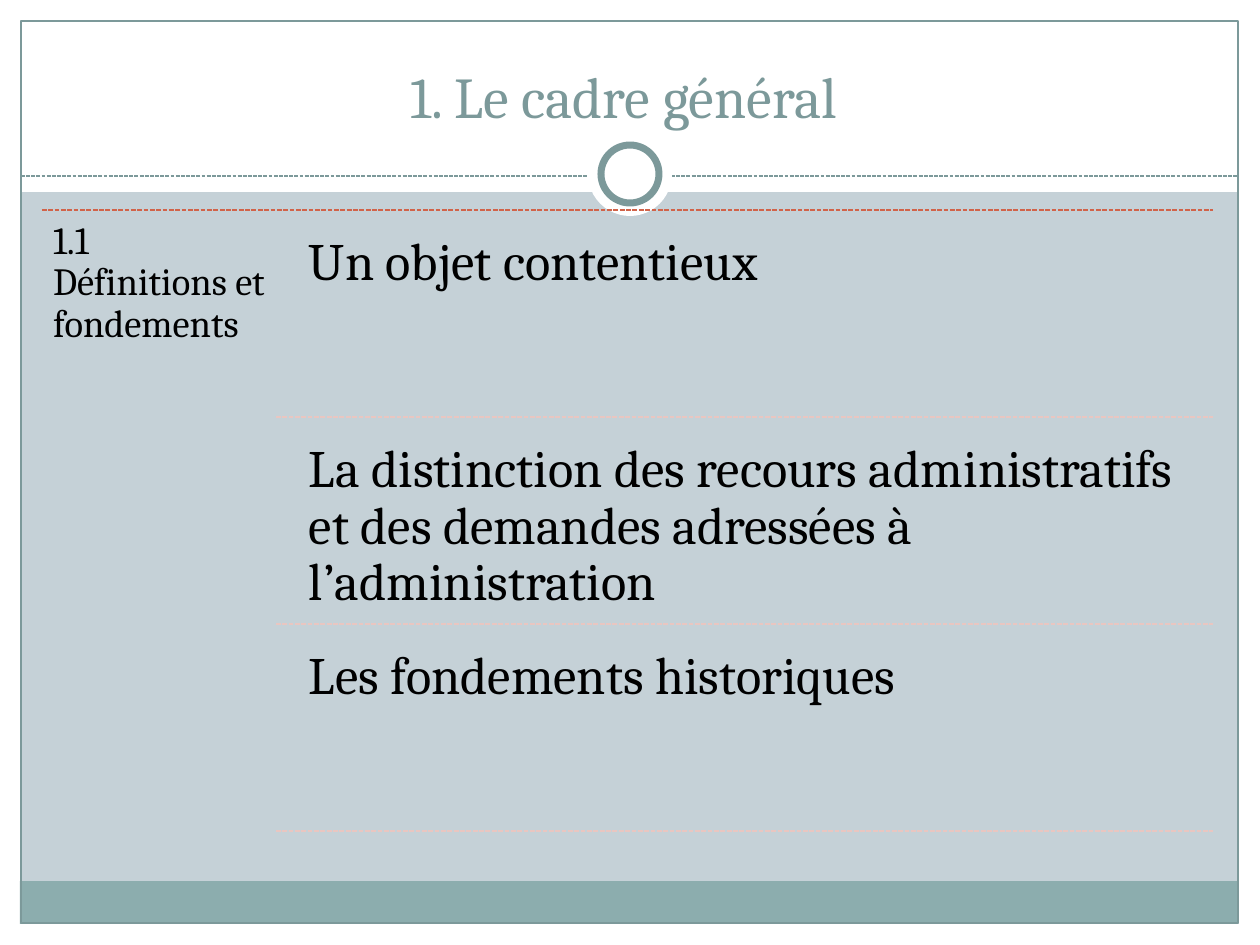
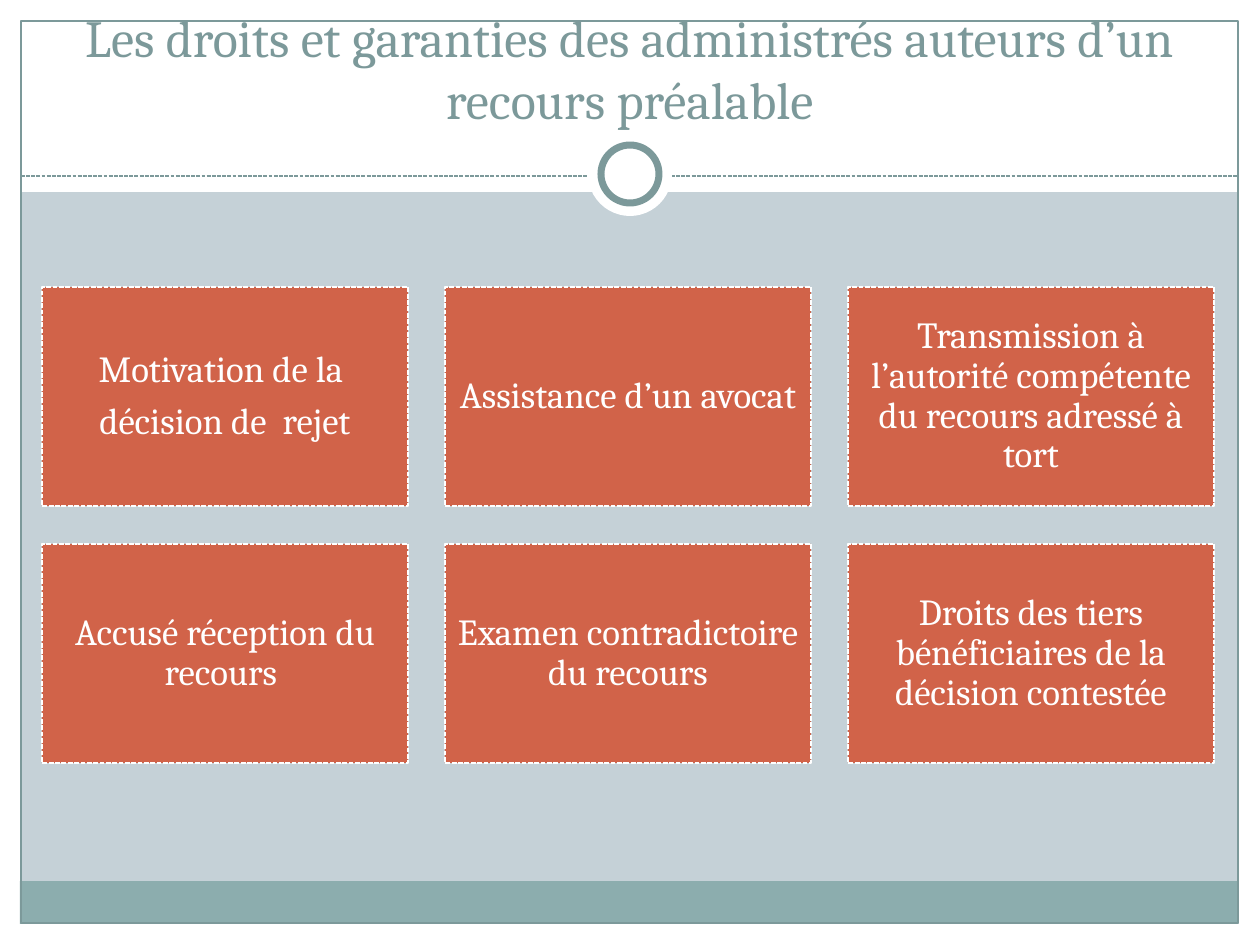
"""Builds two slides on administrative appeals."""
from lxml import etree
from pptx import Presentation
from pptx import util as u
from pptx.dml.color import RGBColor
from pptx.enum import dml, shapes, text
from pptx.oxml import ns

PX = 914400 / 126
TEAL, STRIP, MIST = "7C999A", "8CADAE", "C5D1D7"
RUST, ROSE, WHITE, BLACK = "D16349", "E9C6C1", "FFFFFF", "000000"
RECT, OVAL = shapes.MSO_SHAPE.RECTANGLE, shapes.MSO_SHAPE.OVAL
TOP, MID, LOW = text.MSO_ANCHOR.TOP, text.MSO_ANCHOR.MIDDLE, text.MSO_ANCHOR.BOTTOM
LEFT, MIDDLE = text.PP_ALIGN.LEFT, text.PP_ALIGN.CENTER
hue = RGBColor.from_string


def draw(page, kind, box, fill=None, edge=None, thick=0.75, dash=False):
    spots = [round(n * PX) for n in box]
    if kind == "text":
        return page.shapes.add_textbox(*spots)
    if kind == "line":
        item = page.shapes.add_connector(shapes.MSO_CONNECTOR.STRAIGHT, *spots)
    else:
        item = page.shapes.add_shape(kind, *spots)
        item.shadow.inherit = False
        if fill:
            item.fill.solid()
            item.fill.fore_color.rgb = hue(fill)
        else:
            item.fill.background()
    if edge:
        item.line.color.rgb = hue(edge)
        item.line.width = u.Pt(thick)
        if dash:
            item.line.dash_style = dml.MSO_LINE.SQUARE_DOT
            item.line._ln.find(ns.qn("a:prstDash")).set("val", "sysDash")
    else:
        item.line.fill.background()
    if kind == "line":
        etree.SubElement(item._element.spPr, ns.qn("a:effectLst"))
    return item


def write(item, words, size, tint=BLACK, align=LEFT, anchor=TOP, pad=(11, 11), lead=0.9, after=0.35):
    frame = item.text_frame
    frame.word_wrap = True
    frame.vertical_anchor = anchor
    frame.margin_left = frame.margin_right = round(pad[0] * PX)
    frame.margin_top = frame.margin_bottom = round(pad[1] * PX)
    for i, line in enumerate(words.split("\n")):
        para = frame.add_paragraph() if i else frame.paragraphs[0]
        para.alignment = align
        para.line_spacing = lead
        para.space_after = u.Pt(size * after)
        run = para.add_run()
        run.text = line
        run.font.name = "Cambria"
        run.font.size = u.Pt(size)
        run.font.color.rgb = hue(tint)


deck = Presentation()
deck.slide_width, deck.slide_height = u.Inches(10), u.Inches(7.5)

titles = [
    ("1. Le cadre général ", 33),
    ("Les droits et garanties des administrés auteurs d’un recours préalable", 29.7),
]
bands = [
    (0, 924, 1260, 21, WHITE),
    (0, 0, 1260, 192, WHITE),
    (0, 0, 21, 945, WHITE),
    (1239, 0, 21, 945, WHITE),
    (20, 881, 1217, 43, STRIP),
]
pages = []
for title, size in titles:
    page = deck.slides.add_slide(deck.slide_layouts[6])
    page.background.fill.solid()
    page.background.fill.fore_color.rgb = hue(MIST)
    for *box, fill in bands:
        draw(page, RECT, box, fill)
    draw(page, RECT, (21, 21, 1217, 902), edge=TEAL)
    draw(page, "line", (21, 176, 1239, 176), edge=TEAL, dash=True)
    draw(page, OVAL, (588, 132, 84, 84), WHITE)
    draw(page, OVAL, (601, 145, 58, 58), WHITE, TEAL, 4)
    head = draw(page, "text", (42, 32, 1176, 104))
    write(head, title, size, TEAL, MIDDLE, LOW, pad=(13, 6), lead=1.0, after=0)
    pages.append(page)
frame, rights = pages

draw(frame, "line", (42, 210, 1213, 210), edge=RUST, thick=0.9, dash=True)
theme = draw(frame, "text", (42, 210, 234, 630))
write(theme, "1.1 Définitions et fondements", 22)
points = [
    "Un objet contentieux",
    "La distinction des recours administratifs et des demandes adressées à l’administration",
    "Les fondements historiques",
]
for i, point in enumerate(points):
    y = 220 + 207 * i
    write(draw(frame, "text", (294, y, 920, 197)), point, 30, pad=(15, 15))
    draw(frame, "line", (276, y + 197, 1213, y + 197), edge=ROSE, thick=0.9, dash=True)

cards = [
    "Motivation de la \ndécision de  rejet",
    "Assistance d’un avocat ",
    "Transmission à l’autorité compétente du recours adressé à tort",
    "Accusé réception du recours ",
    "Examen contradictoire du recours",
    "Droits des tiers bénéficiaires de la décision contestée",
]
for i, words in enumerate(cards):
    row, col = divmod(i, 3)
    box = (42 + 403 * col, 287 + 257 * row, 366, 219)
    card = draw(rights, RECT, box, RUST, WHITE, 0.9, True)
    write(card, words, 21, WHITE, MIDDLE, MID)

deck.save("out.pptx")
